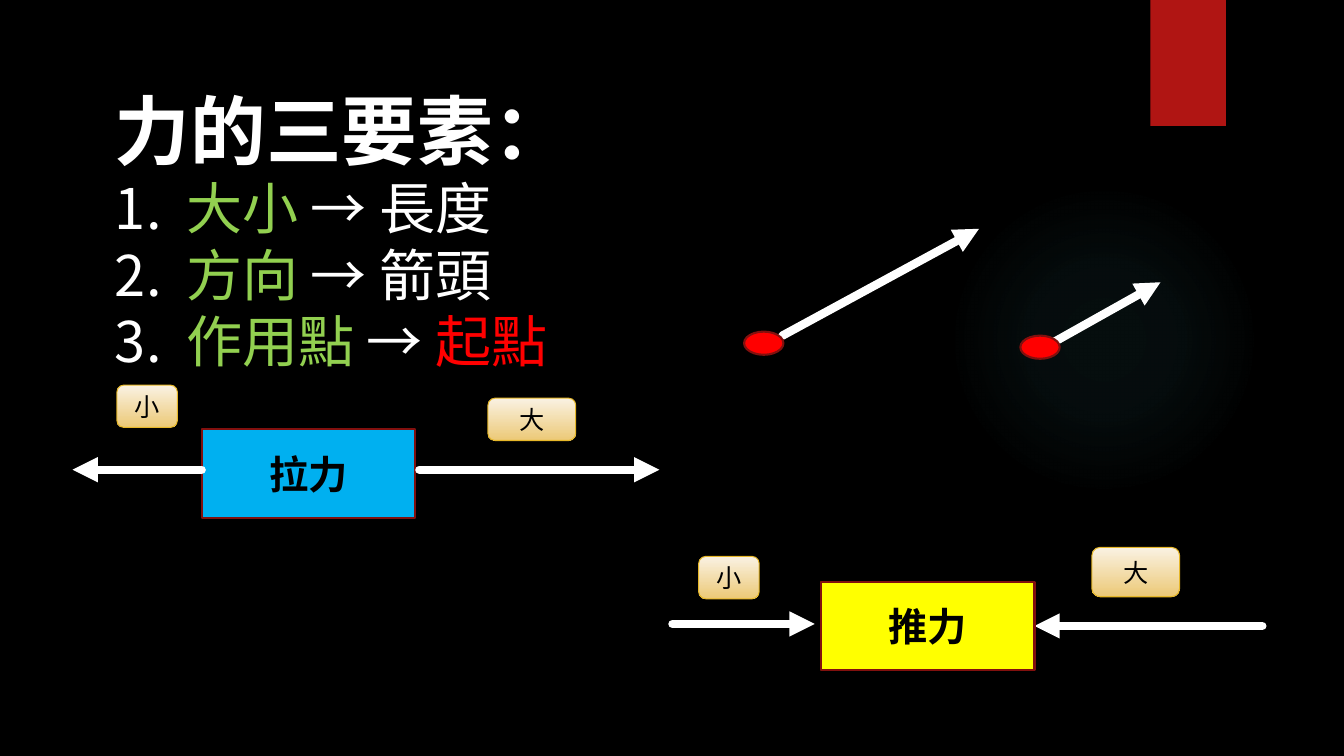
from dataclasses import dataclass
from typing import Any

import pptx
import pptx.dml.color
import pptx.enum.shapes
import pptx.enum.text
import pptx.oxml
import pptx.oxml.ns
import pptx.util

RGB = pptx.dml.color.RGBColor
KIND = pptx.enum.shapes.MSO_SHAPE
ALIGN = pptx.enum.text.PP_ALIGN
ANCHOR = pptx.enum.text.MSO_ANCHOR
Pt = pptx.util.Pt

SCALE = 9144
NOTO = "Noto Sans CJK SC"
GYRE = "TeX Gyre Adventor"

BLACK = RGB(0x00, 0x00, 0x00)
WHITE = RGB(0xFF, 0xFF, 0xFF)
GREEN = RGB(0x92, 0xD0, 0x50)
RED = RGB(0xFF, 0x00, 0x00)
BLUE = RGB(0x00, 0xB0, 0xF0)
YELLOW = RGB(0xFF, 0xFF, 0x00)
BRICK = RGB(0xB0, 0x15, 0x13)
MAROON = RGB(0x82, 0x10, 0x0E)
GOLD = RGB(0xE6, 0xB7, 0x29)
CREAM = RGB(0xFA, 0xF2, 0xE3)
SAND = RGB(0xEC, 0xC9, 0x77)
TEAL = RGB(0x50, 0xB9, 0xC1)

HEAD = {"size": Pt(54), "bold": True, "name": NOTO}
BODY = {"size": Pt(40), "bold": False, "name": NOTO}
FORCE = {"size": Pt(28), "bold": True, "name": GYRE}
TAG = {"size": Pt(18), "bold": False, "name": GYRE}
FLUSH = {"margin_left": 0, "margin_right": 0, "margin_top": 0, "margin_bottom": 0,
         "word_wrap": True}


@dataclass
class Box:
    kind: Any
    left: int
    top: int
    width: int
    height: int
    fills: tuple
    edge: Any = None
    weight: float = 1.5
    text: str = ""
    font: Any = None


@dataclass
class Arrow:
    x1: int
    y1: int
    x2: int
    y2: int


def dot(left: int, top: int) -> Box:
    return Box(KIND.OVAL, left, top, 39, 23, (RED,), MAROON)


def block(left: int, top: int, color: RGB, text: str) -> Box:
    return Box(KIND.RECTANGLE, left, top, 212, 88, (color,), MAROON, 1.5, text, FORCE)


def tag(left: int, top: int, width: int, height: int, text: str) -> Box:
    return Box(KIND.ROUNDED_RECTANGLE, left, top, width, height, (CREAM, SAND),
               GOLD, 0.75, text, TAG)


GLOW = Box(KIND.OVAL, 941, 183, 308, 308, (TEAL,))
STOPS = ((0, 7), (36, 6), (69, 0))

PARTS = [
    Box(KIND.RECTANGLE, 1141, 0, 75, 125, (BRICK,)),
    Arrow(776, 333, 971, 227),
    dot(738, 329),
    Arrow(1046, 339, 1151, 280),
    dot(1012, 333),
    block(200, 426, BLUE, "拉力"),
    Arrow(200, 466, 72, 466),
    Arrow(416, 466, 654, 466),
    tag(484, 395, 87, 42, "大"),
    tag(116, 382, 60, 42, "小"),
    Arrow(667, 619, 808, 619),
    Arrow(1252, 621, 1026, 621),
    block(814, 577, YELLOW, "推力"),
    tag(1083, 543, 87, 49, "大"),
    tag(693, 552, 60, 42, "小"),
]

ITEMS = [
    (("大小", GREEN), (" → 長度", WHITE)),
    (("方向", GREEN), (" → 箭頭", WHITE)),
    (("作用點", GREEN), (" → ", WHITE), ("起點", RED)),
]


def px(count: int) -> int:
    return count * SCALE


def node(tag: str, inner: str = "", **attrs: Any) -> Any:
    pairs = " ".join(f'{key}="{val}"' for key, val in attrs.items())
    space = pptx.oxml.ns.nsdecls("a")
    return pptx.oxml.parse_xml(f"<a:{tag} {space} {pairs}>{inner}</a:{tag}>")


def apply(thing: Any, look: dict) -> None:
    for key, val in look.items():
        setattr(thing, key, val)


def place(thing: Any, left: int, top: int, width: int, height: int) -> None:
    apply(thing, {"left": px(left), "top": px(top),
                  "width": px(width), "height": px(height)})


def write(para: Any, text: str, look: dict, color: RGB) -> None:
    run = para.add_run()
    run.text = text
    apply(run.font, look)
    run.font.color.rgb = color
    run.font._element.append(node("ea", typeface=look["name"]))


def draw_box(slide: Any, box: Box) -> Any:
    shape = slide.shapes.add_shape(box.kind, px(box.left), px(box.top),
                                   px(box.width), px(box.height))
    shape.shadow.inherit = False
    if len(box.fills) > 1:
        shape.fill.gradient()
        shape.fill.gradient_angle = 270
        for stop, color in zip(shape.fill.gradient_stops, box.fills):
            stop.color.rgb = color
    else:
        shape.fill.solid()
        shape.fill.fore_color.rgb = box.fills[0]
    if box.edge is None:
        shape.line.fill.background()
    else:
        shape.line.color.rgb = box.edge
        shape.line.width = Pt(box.weight)
    if box.text:
        shape.text_frame.vertical_anchor = ANCHOR.MIDDLE
        para = shape.text_frame.paragraphs[0]
        para.alignment = ALIGN.CENTER
        write(para, box.text, box.font, BLACK)
    return shape


def draw_arrow(slide: Any, arrow: Arrow) -> None:
    line = slide.shapes.add_connector(pptx.enum.shapes.MSO_CONNECTOR.STRAIGHT,
                                      px(arrow.x1), px(arrow.y1),
                                      px(arrow.x2), px(arrow.y2))
    line.line.color.rgb = WHITE
    line.line.width = Pt(6)
    stroke = line.line._get_or_add_ln()
    stroke.set("cap", "rnd")
    stroke.append(node("tailEnd", type="triangle"))
    line._element.spPr.append(node("effectLst"))


def draw_glow(slide: Any) -> None:
    shape = draw_box(slide, GLOW)
    stops = "".join(
        f'<a:gs pos="{pos * 1000}"><a:srgbClr val="{TEAL}">'
        f'<a:alpha val="{alpha * 1000}"/></a:srgbClr></a:gs>' for pos, alpha in STOPS)
    focus = ('<a:path path="circle"><a:fillToRect l="50000" t="50000" '
             'r="50000" b="50000"/></a:path>')
    props = shape._element.spPr
    solid = props.find(pptx.oxml.ns.qn("a:solidFill"))
    props.replace(solid, node("gradFill", f"<a:gsLst>{stops}</a:gsLst>{focus}"))


def draw_title(slide: Any) -> None:
    title = slide.shapes.title
    place(title, 114, 60, 958, 113)
    apply(title.text_frame, FLUSH | {"vertical_anchor": ANCHOR.BOTTOM})
    para = title.text_frame.paragraphs[0]
    para.alignment = ALIGN.LEFT
    write(para, "力的三要素：", HEAD, WHITE)


def draw_list(slide: Any) -> None:
    box = slide.shapes.add_textbox(px(114), px(173), px(958), px(198))
    frame = box.text_frame
    apply(frame, FLUSH)
    for rank, item in enumerate(ITEMS):
        para = frame.add_paragraph() if rank else frame.paragraphs[0]
        para.line_spacing = Pt(47.5)
        props = para._p.get_or_add_pPr()
        props.set("marL", str(px(71)))
        props.set("indent", str(px(-71)))
        props.append(node("buClr", f'<a:srgbClr val="{WHITE}"/>'))
        props.append(node("buFont", typeface=NOTO))
        props.append(node("buAutoNum", type="arabicPeriod"))
        for text, color in item:
            write(para, text, BODY, color)


def main() -> None:
    deck = pptx.Presentation()
    apply(deck, {"slide_width": px(1333), "slide_height": px(750)})
    slide = deck.slides.add_slide(deck.slide_layouts[5])
    slide.background.fill.solid()
    slide.background.fill.fore_color.rgb = BLACK
    draw_glow(slide)
    draw_title(slide)
    draw_list(slide)
    for part in PARTS:
        if isinstance(part, Arrow):
            draw_arrow(slide, part)
        else:
            draw_box(slide, part)
    deck.save("out.pptx")


if __name__ == "__main__":
    main()
